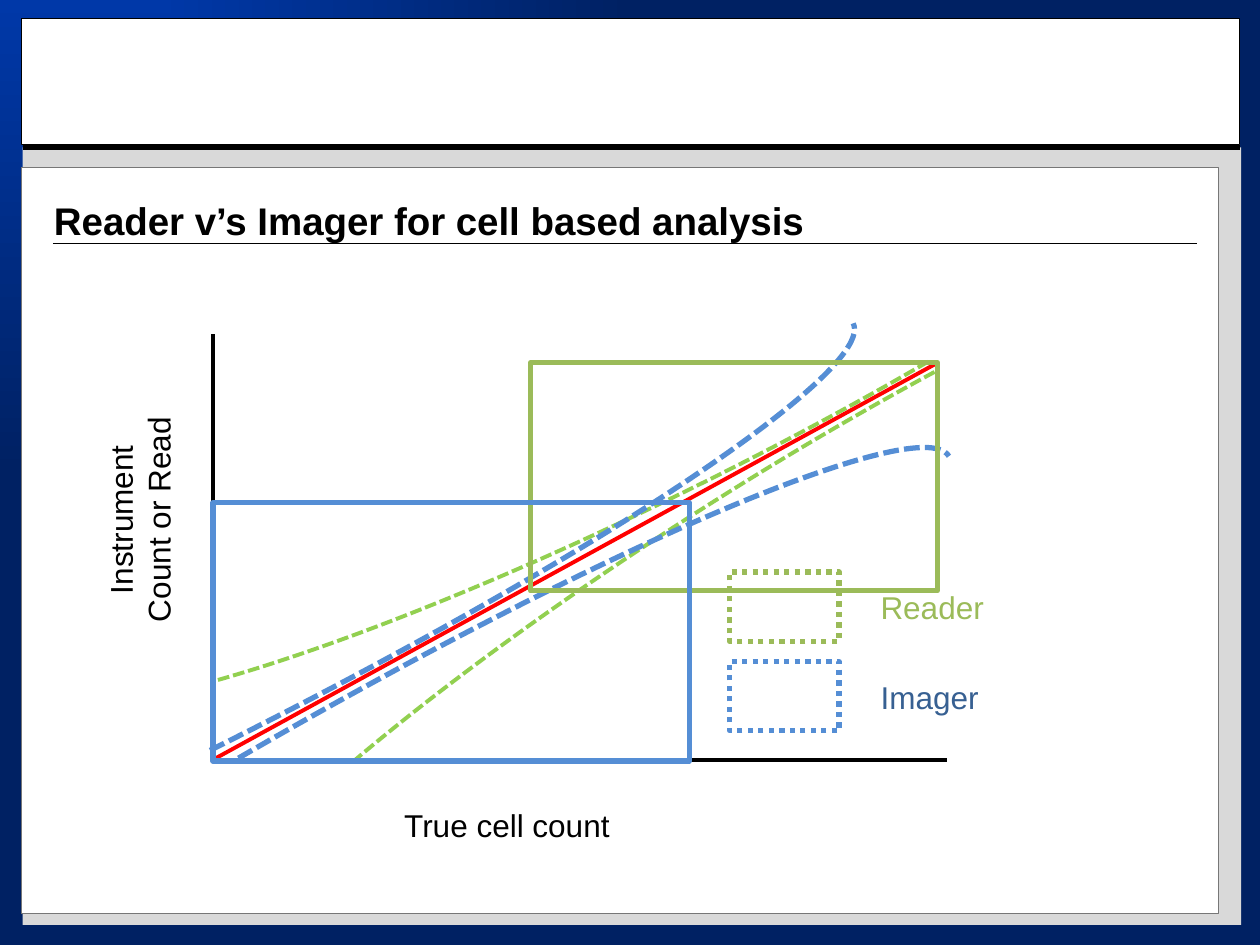
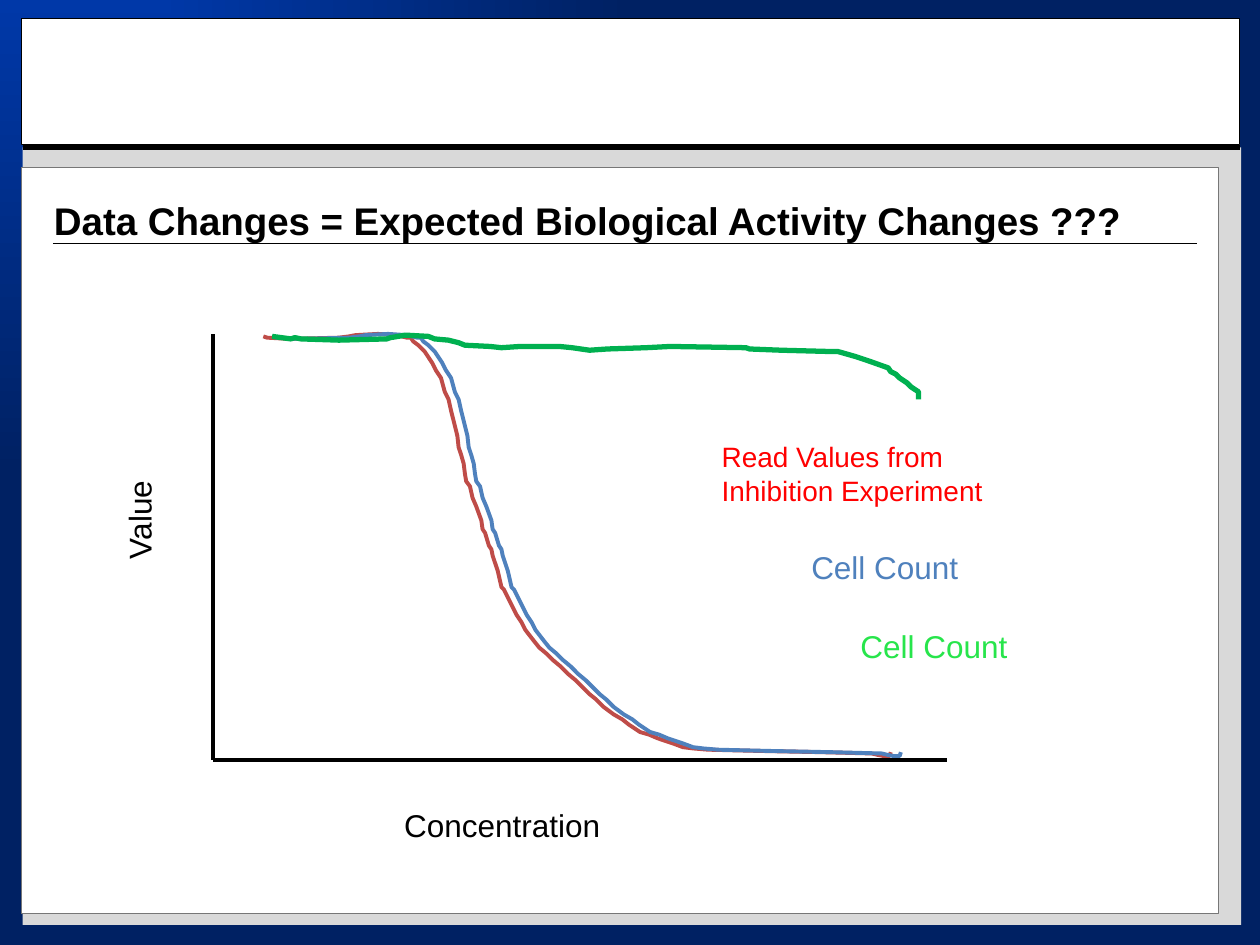
from dataclasses import dataclass
from typing import NamedTuple, Optional

from lxml.etree import SubElement
from pptx import Presentation
from pptx.dml.color import RGBColor
from pptx.enum.dml import MSO_LINE
from pptx.enum.shapes import MSO_CONNECTOR, MSO_SHAPE
from pptx.enum.text import MSO_ANCHOR, PP_ALIGN
from pptx.oxml.ns import qn
from pptx.shapes.autoshape import Shape
from pptx.slide import Slide
from pptx.util import Inches, Pt


@dataclass(frozen=True)
class Theme:
    font: str = "Arial"
    title_size: int = 22
    label_size: int = 18
    note_size: int = 16
    black: str = "000000"
    white: str = "FFFFFF"
    page_light: str = "0038A8"
    page_dark: str = "002163"
    panel_shadow: str = "D9D9D9"
    panel_edge: str = "777777"
    red: str = "FF0000"
    reader: str = "9BBB59"
    reader_band: str = "92D050"
    imager: str = "558ED5"
    imager_label: str = "376092"
    read_curve: str = "BF4C48"
    count_curve: str = "4F81BD"
    stable_curve: str = "00B050"
    stable_label: str = "27E54B"


THEME = Theme()


class Box(NamedTuple):
    left: float
    top: float
    width: float
    height: float


class Stroke(NamedTuple):
    color: str
    width: float
    dash: Optional[MSO_LINE] = None


class ErrorArc(NamedTuple):
    box: Box
    rotation: float
    adjustments: tuple[float, float]
    flipped: bool
    stroke: Stroke


class LegendEntry(NamedTuple):
    name: str
    top: float
    width: float
    key_color: str
    text_color: str


class Rectangle(NamedTuple):
    box: Box
    fill: Optional[str]
    stroke: Optional[Stroke]


THIN = Stroke(THEME.black, 0.75)
AXIS = Stroke(THEME.black, 2.25)
READER_BAND = Stroke(THEME.reader_band, 2.25, MSO_LINE.SQUARE_DOT)
IMAGER_BAND = Stroke(THEME.imager, 3, MSO_LINE.SQUARE_DOT)

# Plot frame shared by both charts
ORIGIN = (1.69, 6.03)
AXIS_TOP = (1.69, 2.65)
AXIS_RIGHT = (7.52, 6.03)

FRAME_BACK = [
    Rectangle(Box(0.18, 1.17, 9.67, 6.17), THEME.panel_shadow, None),
    Rectangle(Box(0.17, 1.33, 9.5, 5.92), THEME.white, Stroke(THEME.panel_edge, 0.75)),
]
HEADER = Rectangle(Box(0.17, 0.15, 9.67, 1), THEME.white, THIN)

ERROR_ARCS = [
    ErrorArc(Box(-0.43, 2.09, 11.06, 1.87), 153.7, (121.44, 210.77), False, READER_BAND),
    ErrorArc(Box(0.63, 3.87, 10.96, 1.87), 147.6, (121.44, 208.81), True, READER_BAND),
    ErrorArc(Box(-3.79, 5.91, 12.14, 1.51), 329.9, (161.53, 0), False, IMAGER_BAND),
    ErrorArc(Box(-4.73, 4.52, 12.14, 1.51), 333.5, (161.53, 0), True, IMAGER_BAND),
]
LEGEND = [
    LegendEntry("Reader", 4.54, 1.03, THEME.reader, THEME.reader),
    LegendEntry("Imager", 5.25, 0.99, THEME.imager, THEME.imager_label),
]
WORKING_RANGES = [
    Rectangle(Box(4.21, 2.88, 3.23, 1.81), None, Stroke(THEME.reader, 3)),
    Rectangle(Box(1.69, 3.99, 3.78, 2.05), None, Stroke(THEME.imager, 3)),
]

INHIBITION = [
    (2.09, 2.67), (2.12, 2.68), (2.3, 2.69), (2.69, 2.68), (2.77, 2.67), (2.82, 2.66),
    (3, 2.65), (3.15, 2.66), (3.23, 2.68), (3.26, 2.68), (3.28, 2.71), (3.32, 2.74),
    (3.37, 2.79), (3.43, 2.88), (3.46, 2.94), (3.5, 3), (3.53, 3.11), (3.56, 3.17),
    (3.58, 3.26), (3.6, 3.34), (3.62, 3.42), (3.63, 3.46), (3.64, 3.55), (3.66, 3.61),
    (3.68, 3.68), (3.69, 3.76), (3.7, 3.82), (3.73, 3.86), (3.75, 3.95), (3.78, 4.02),
    (3.82, 4.13), (3.83, 4.2), (3.85, 4.23), (3.88, 4.33), (3.9, 4.36), (3.91, 4.41),
    (3.95, 4.53), (3.98, 4.66), (4, 4.68), (4.03, 4.74), (4.06, 4.8), (4.1, 4.88),
    (4.14, 4.94), (4.17, 5), (4.24, 5.09), (4.28, 5.14), (4.34, 5.19), (4.39, 5.24),
    (4.45, 5.29), (4.51, 5.35), (4.57, 5.4), (4.62, 5.45), (4.68, 5.51), (4.73, 5.55),
    (4.79, 5.61), (4.87, 5.67), (4.94, 5.71), (4.99, 5.75), (5.08, 5.81), (5.15, 5.83),
    (5.22, 5.86), (5.34, 5.9), (5.42, 5.93), (5.5, 5.94), (5.62, 5.95), (6.03, 5.96),
    (6.52, 5.97), (6.92, 5.98), (6.96, 5.99), (7.01, 6), (7.06, 6), (7.07, 5.97),
]
STABLE_COUNT = [
    (2.16, 2.67), (2.31, 2.69), (2.34, 2.68), (2.39, 2.69), (2.69, 2.7), (3.07, 2.69),
    (3.1, 2.68), (3.22, 2.66), (3.4, 2.67), (3.45, 2.69), (3.56, 2.7), (3.64, 2.72),
    (3.69, 2.74), (3.89, 2.75), (3.98, 2.76), (4.13, 2.75), (4.44, 2.75), (4.54, 2.76),
    (4.68, 2.78), (4.82, 2.77), (5.13, 2.76), (5.32, 2.75), (5.92, 2.76), (5.95, 2.77),
    (6.2, 2.78), (6.59, 2.79), (6.65, 2.79), (6.72, 2.81), (6.79, 2.83), (6.91, 2.87),
    (7.05, 2.92), (7.07, 2.95), (7.11, 2.97), (7.14, 3), (7.2, 3.04), (7.23, 3.07),
    (7.29, 3.11), (7.29, 3.17),
]
COUNT_SHIFT = 0.08


def set_line(line, stroke: Optional[Stroke]) -> None:
    if stroke is None:
        line.fill.background()
        return
    line.color.rgb = RGBColor.from_string(stroke.color)
    line.width = Pt(stroke.width)
    if stroke.dash is not None:
        line.dash_style = stroke.dash


def style_shape(shape: Shape, fill: Optional[str], stroke: Optional[Stroke]) -> Shape:
    shape.shadow.inherit = False
    if fill is None:
        shape.fill.background()
    else:
        shape.fill.solid()
        shape.fill.fore_color.rgb = RGBColor.from_string(fill)
    set_line(shape.line, stroke)
    return shape


def add_preset(slide: Slide, preset: MSO_SHAPE, box: Box, fill: Optional[str],
               stroke: Optional[Stroke]) -> Shape:
    shape = slide.shapes.add_shape(preset, *map(Inches, box))
    return style_shape(shape, fill, stroke)


def add_rectangle(slide: Slide, rectangle: Rectangle) -> None:
    add_preset(slide, MSO_SHAPE.RECTANGLE, *rectangle)


def add_line(slide: Slide, start: tuple[float, float], end: tuple[float, float],
             stroke: Stroke) -> None:
    connector = slide.shapes.add_connector(
        MSO_CONNECTOR.STRAIGHT, *map(Inches, (*start, *end)))
    set_line(connector.line, stroke)
    SubElement(connector._element.spPr, qn("a:effectLst"))


def add_text(slide: Slide, text: str, box: Box, *, size: int = THEME.label_size,
             color: str = THEME.black, bold: bool = False, wrap: bool = False,
             rotation: float = 0, align: PP_ALIGN = PP_ALIGN.LEFT,
             anchor: MSO_ANCHOR = MSO_ANCHOR.TOP) -> None:
    text_box = slide.shapes.add_textbox(*map(Inches, box))
    text_box.rotation = rotation
    frame = text_box.text_frame
    frame.word_wrap = wrap
    frame.vertical_anchor = anchor
    frame.text = text
    for paragraph in frame.paragraphs:
        paragraph.alignment = align
        paragraph.font.name = THEME.font
        paragraph.font.size = Pt(size)
        paragraph.font.bold = bold
        paragraph.font.color.rgb = RGBColor.from_string(color)


def add_arc(slide: Slide, arc: ErrorArc) -> None:
    shape = add_preset(slide, MSO_SHAPE.ARC, arc.box, None, arc.stroke)
    shape.rotation = arc.rotation
    for index, value in enumerate(arc.adjustments):
        shape.adjustments[index] = value
    if arc.flipped:
        shape._element.spPr.xfrm.set("flipV", "1")


def add_curve(slide: Slide, points: list[tuple[float, float]], stroke: Stroke,
              shift: float = 0) -> None:
    start, *rest = [(Inches(x + shift), Inches(y)) for x, y in points]
    builder = slide.shapes.build_freeform(*start)
    builder.add_line_segments(rest, close=False)
    style_shape(builder.convert_to_shape(), None, stroke)


def add_legend_entry(slide: Slide, entry: LegendEntry) -> None:
    key = Box(5.79, entry.top, 0.87, 0.55)
    add_preset(slide, MSO_SHAPE.RECTANGLE, key, None,
               Stroke(entry.key_color, 3, MSO_LINE.ROUND_DOT))
    add_text(slide, entry.name, Box(6.89, entry.top + 0.08, entry.width, 0.4),
             color=entry.text_color)


def paint_background(slide: Slide) -> None:
    fill = slide.background.fill
    fill.gradient()
    for stop, color in zip(fill.gradient_stops, (THEME.page_light, THEME.page_dark)):
        stop.color.rgb = RGBColor.from_string(color)
    # Radiate from the top left corner instead of along a line
    gradient = next(slide._element.iter(qn("a:gradFill")))
    gradient.remove(gradient.find(qn("a:lin")))
    radiate = SubElement(gradient, qn("a:path"), {"path": "rect"})
    SubElement(radiate, qn("a:fillToRect"), {"r": "100000", "b": "100000"})


def add_framed_slide(presentation: Presentation, title: str, title_width: float) -> Slide:
    slide = presentation.slides.add_slide(presentation.slide_layouts[6])
    paint_background(slide)
    for rectangle in FRAME_BACK:
        add_rectangle(slide, rectangle)
    add_line(slide, (0.18, 1.17), (9.84, 1.17), Stroke(THEME.black, 3))
    add_line(slide, (0.42, 1.93), (9.5, 1.93), THIN)
    add_rectangle(slide, HEADER)
    add_text(slide, title, Box(0.33, 1.5, title_width, 0.5), size=THEME.title_size,
             bold=True, wrap=True, anchor=MSO_ANCHOR.MIDDLE)
    for end in (AXIS_TOP, AXIS_RIGHT):
        add_line(slide, ORIGIN, end, AXIS)
    return slide


def build_comparison(presentation: Presentation) -> None:
    slide = add_framed_slide(presentation, "Reader v’s Imager for cell based analysis", 7.67)
    add_line(slide, ORIGIN, (7.44, 2.88), Stroke(THEME.red, 2.25))
    add_text(slide, "True cell count", Box(3.11, 6.35, 1.85, 0.4))
    add_text(slide, "Instrument\nCount or Read", Box(0.19, 3.77, 1.84, 0.71),
             rotation=270, align=PP_ALIGN.CENTER)
    for arc in ERROR_ARCS:
        add_arc(slide, arc)
    for entry in LEGEND:
        add_legend_entry(slide, entry)
    for working_range in WORKING_RANGES:
        add_rectangle(slide, working_range)


def build_activity(presentation: Presentation) -> None:
    slide = add_framed_slide(
        presentation, "Data Changes = Expected Biological Activity Changes ???", 9.16)
    add_text(slide, "Concentration", Box(3.11, 6.35, 1.77, 0.4))
    add_text(slide, "Value", Box(0.69, 3.92, 0.83, 0.4), rotation=270)

    # Each curve is followed by its label
    add_curve(slide, INHIBITION, Stroke(THEME.read_curve, 2.25))
    add_text(slide, "Read Values from Inhibition Experiment", Box(5.63, 3.44, 2.44, 0.64),
             size=THEME.note_size, color=THEME.red, wrap=True)
    add_curve(slide, INHIBITION, Stroke(THEME.count_curve, 2.25), COUNT_SHIFT)
    add_text(slide, "Cell Count", Box(6.34, 4.3, 1.38, 0.4), color=THEME.count_curve)
    add_curve(slide, STABLE_COUNT, Stroke(THEME.stable_curve, 3))
    add_text(slide, "Cell Count", Box(6.73, 4.93, 1.38, 0.4), color=THEME.stable_label)


def main() -> None:
    presentation = Presentation()
    presentation.slide_width = Inches(10)
    presentation.slide_height = Inches(7.5)
    build_comparison(presentation)
    build_activity(presentation)
    presentation.save("out.pptx")


if __name__ == "__main__":
    main()
